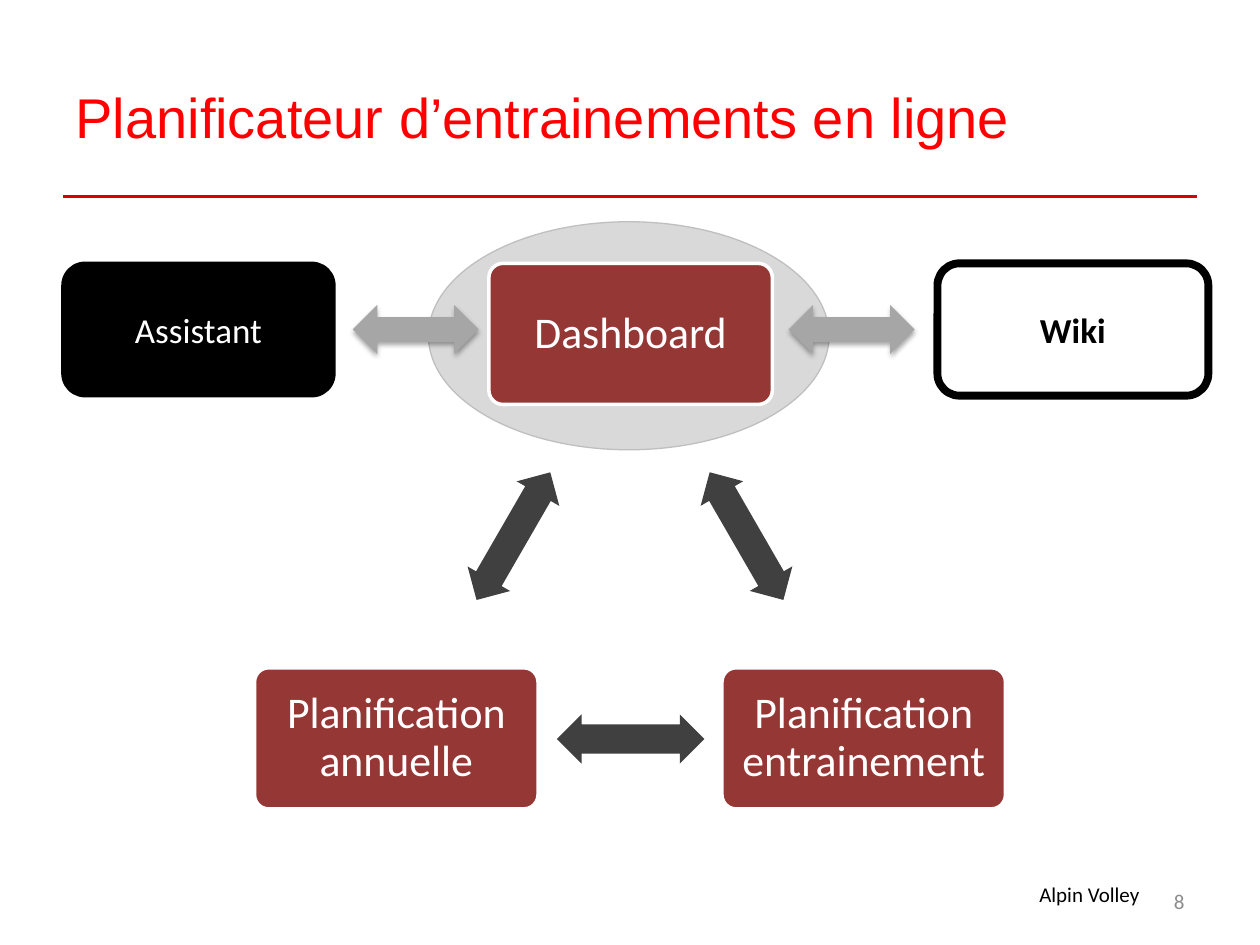
from dataclasses import dataclass

from lxml import etree
from pptx import Presentation
from pptx.dml.color import RGBColor
from pptx.enum.shapes import MSO_CONNECTOR, MSO_SHAPE
from pptx.enum.text import MSO_ANCHOR, PP_ALIGN
from pptx.oxml import parse_xml
from pptx.oxml.ns import qn
from pptx.util import Inches, Pt

DRAWING_NS = "http://schemas.openxmlformats.org/drawingml/2006/main"
BRICK, BLACK, WHITE = "953735", "000000", "FFFFFF"
DARK_GREY, MID_GREY = "404040", "A6A6A6"


@dataclass
class Box:
    text: str
    left: float
    top: float
    width: float
    height: float
    fill: str
    line: str
    line_width: float
    size: int
    color: str = WHITE
    bold: bool = False
    corner: float = 0.1667
    spacing: float = 1.0


@dataclass
class Arrow:
    left: float
    top: float
    width: float
    fill: str
    shaft: float = 0.5
    rotation: int = 0
    shadow: bool = False


def rgb(value: str) -> RGBColor:
    return RGBColor.from_string(value)


def format_text(shape, text: str, size: int, color: str, align=PP_ALIGN.LEFT,
                anchor=MSO_ANCHOR.MIDDLE, font: str = "Calibri", bold: bool = False):
    frame = shape.text_frame
    frame.text = text
    frame.word_wrap = True
    frame.vertical_anchor = anchor
    para = frame.paragraphs[0]
    para.alignment = align
    span = para.runs[0]
    span.font.name = font
    span.font.size = Pt(size)
    span.font.bold = bold
    span.font.color.rgb = rgb(color)
    return frame


def add_shape(page, kind, left: float, top: float, width: float, height: float,
              fill: str, line: str = "", line_width: float = 0):
    shape = page.shapes.add_shape(kind, Inches(left), Inches(top), Inches(width), Inches(height))
    shape.shadow.inherit = False
    shape.fill.solid()
    shape.fill.fore_color.rgb = rgb(fill)
    if line:
        shape.line.color.rgb = rgb(line)
        shape.line.width = Pt(line_width)
    else:
        shape.line.fill.background()
    return shape


def add_box(page, box: Box) -> None:
    shape = add_shape(page, MSO_SHAPE.ROUNDED_RECTANGLE, box.left, box.top, box.width,
                      box.height, box.fill, box.line, box.line_width)
    shape.adjustments[0] = box.corner
    frame = format_text(shape, box.text, box.size, box.color, PP_ALIGN.CENTER, bold=box.bold)
    # The rounded corners already inset the text a little
    frame.margin_left = frame.margin_right = Inches(0.08)
    frame.paragraphs[0].line_spacing = box.spacing


def add_arrow(page, arrow: Arrow) -> None:
    shape = add_shape(page, MSO_SHAPE.LEFT_RIGHT_ARROW, arrow.left, arrow.top,
                      arrow.width, 0.39, arrow.fill)
    shape.adjustments[0] = arrow.shaft
    shape.adjustments[1] = 0.5
    shape.rotation = arrow.rotation
    if arrow.shadow:
        effects = shape._element.spPr.find(qn("a:effectLst"))
        effects.append(parse_xml(
            f'<a:outerShdw xmlns:a="{DRAWING_NS}" blurRad="{Pt(3.1)}" dist="{Pt(1.8)}" '
            f'dir="5400000" rotWithShape="0"><a:srgbClr val="{BLACK}">'
            '<a:alpha val="35000"/></a:srgbClr></a:outerShdw>'))


def add_label(page, text: str, left: float, width: float, color: str, align, anchor) -> None:
    label = page.shapes.add_textbox(Inches(left), Inches(6.95), Inches(width), Inches(0.4))
    format_text(label, text, 12, color, align, anchor)


def plan_box(text: str, left: float, top: float) -> Box:
    return Box(text, left, top, 2.25, 1.12, BRICK, WHITE, 2, 25, corner=0.1, spacing=0.9)


def side_box(text: str, left: float, fill: str, line_width: float, color: str,
             bold: bool = False) -> Box:
    return Box(text, left, 2.09, 2.15, 1.05, fill, BLACK, line_width, 20, color, bold)


BOXES = [
    plan_box("Dashboard", 3.88, 2.09),
    plan_box("Planification entrainement", 5.73, 5.3),
    plan_box("Planification annuelle", 2.02, 5.3),
    side_box("Assistant", 0.5, BLACK, 2, WHITE),
    side_box("Wiki", 7.44, WHITE, 4.5, BLACK, bold=True),
]
ARROWS = [
    Arrow(5.34, 4.06, 1.17, DARK_GREY, 0.6, 60),
    Arrow(4.42, 5.67, 1.17, DARK_GREY, 0.6, 180),
    Arrow(3.49, 4.06, 1.17, DARK_GREY, 0.6, 300),
    Arrow(2.8, 2.42, 1, MID_GREY, shadow=True),
    Arrow(6.26, 2.42, 1, MID_GREY, shadow=True),
]


def main() -> None:
    deck = Presentation()
    deck.slide_width, deck.slide_height = Inches(10), Inches(7.5)
    page = deck.slides.add_slide(deck.slide_layouts[5])

    # Title and the red rule below it
    title = page.shapes.title
    title.left, title.top = Inches(0.5), Inches(0.3)
    title.width, title.height = Inches(9), Inches(1.25)
    format_text(title, "Planificateur d’entrainements en ligne", 32, "FF0000", font="Arial")
    rule = page.shapes.add_connector(MSO_CONNECTOR.STRAIGHT, Inches(0.5), Inches(1.56),
                                     Inches(9.5), Inches(1.56))
    rule.line.color.rgb = rgb("DA0000")
    rule.line.width = Pt(1.5)
    etree.SubElement(rule._element.spPr, qn("a:effectLst"))

    # Footer
    add_label(page, "Alpin Volley", 8.15, 1.35, BLACK, PP_ALIGN.LEFT, MSO_ANCHOR.TOP)
    add_label(page, "8", 7.17, 2.33, "8C8C8C", PP_ALIGN.RIGHT, MSO_ANCHOR.MIDDLE)

    # Diagram: halo, boxes, then arrows
    add_shape(page, MSO_SHAPE.OVAL, 3.4, 1.76, 3.18, 1.81, "D9D9D9", "BFBFBF", 0.75)
    for box in BOXES:
        add_box(page, box)
    for arrow in ARROWS:
        add_arrow(page, arrow)

    deck.save("out.pptx")


if __name__ == "__main__":
    main()
